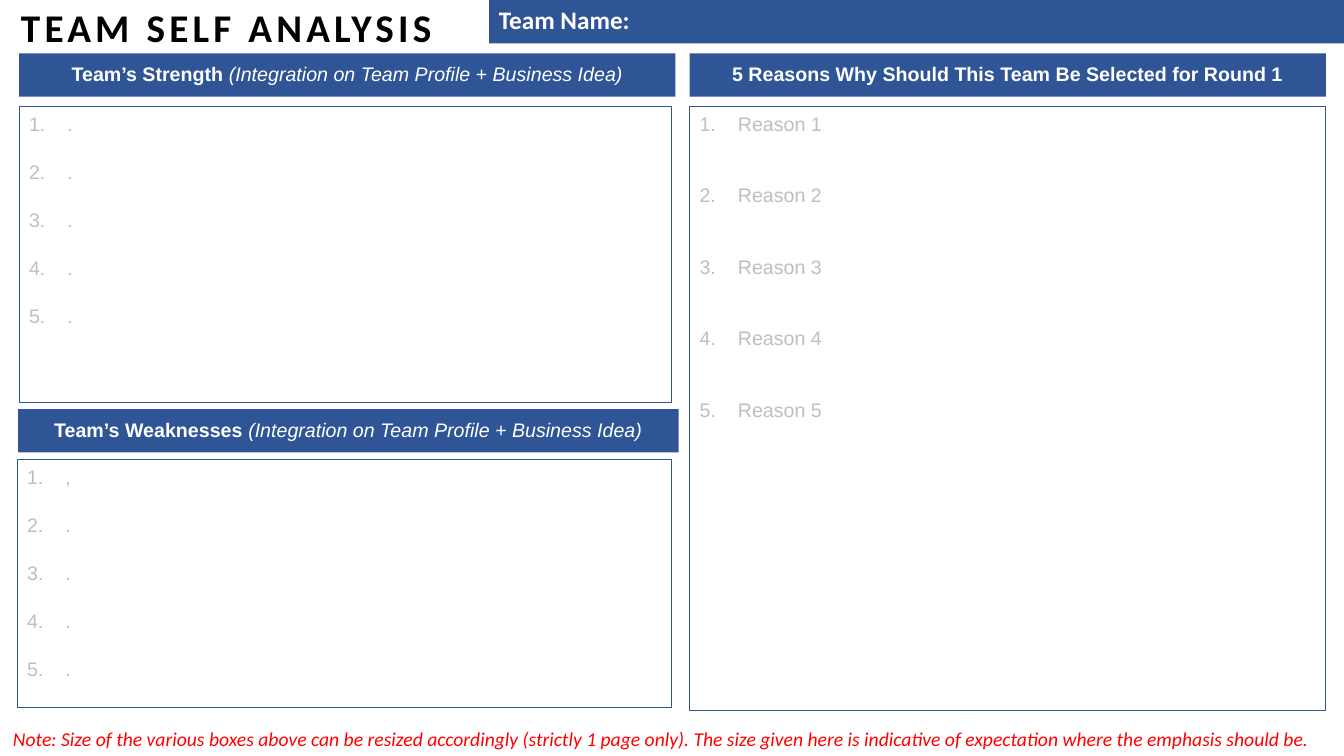
from lxml.etree import SubElement
from pptx import Presentation
from pptx.dml.color import RGBColor
from pptx.enum.shapes import MSO_SHAPE
from pptx.enum.text import MSO_ANCHOR, PP_ALIGN
from pptx.oxml.ns import qn
from pptx.util import Inches, Pt

COLORS = {"blue": "2F5597", "white": "FFFFFF", "black": "000000",
          "hint": "BFBFBF", "note": "FF0000"}
BAR_HEIGHT = 0.43
INDENT = 0.38
FOCUS = "(Integration on Team Profile + Business Idea)"


def style_run(run, font, size, color, bold=False, italic=False):
    """Format one run of text."""
    run.font.name = font
    run.font.size = Pt(size)
    run.font.bold = bold
    run.font.italic = italic
    run.font.color.rgb = RGBColor.from_string(COLORS[color])


def add_panel(slide, box, fill=None, outline=None):
    """Add a flat rectangle with an optional fill and outline."""
    panel = slide.shapes.add_shape(MSO_SHAPE.RECTANGLE, *map(Inches, box))
    panel.shadow.inherit = False
    if fill:
        panel.fill.solid()
        panel.fill.fore_color.rgb = RGBColor.from_string(COLORS[fill])
    else:
        panel.fill.background()
    if outline:
        panel.line.color.rgb = RGBColor.from_string(COLORS[outline])
        panel.line.width = Pt(0.75)
    else:
        panel.line.fill.background()
    panel.text_frame.word_wrap = True
    return panel


def add_title(slide, box, title):
    """Add the letter-spaced slide title."""
    frame = slide.shapes.add_textbox(*map(Inches, box)).text_frame
    frame.word_wrap = True
    frame.vertical_anchor = MSO_ANCHOR.MIDDLE
    frame.text = title
    heading = frame.paragraphs[0]
    heading.line_spacing = 0.9
    style_run(heading.runs[0], "Calibri", 28, "black", bold=True)
    heading.runs[0].font._element.set("spc", "300")


def add_bar(slide, box, label, focus="", font="Arial", size=14,
            align=PP_ALIGN.CENTER):
    """Add a blue heading bar with a bold label and an italic focus."""
    frame = add_panel(slide, box, fill="blue").text_frame
    frame.vertical_anchor = MSO_ANCHOR.MIDDLE
    heading = frame.paragraphs[0]
    heading.alignment = align
    heading.line_spacing = 0.9
    heading.text = label
    style_run(heading.runs[0], font, size, "white", bold=True)
    if focus:
        focus_run = heading.add_run()
        focus_run.text = focus
        style_run(focus_run, font, size, "white", italic=True)


def add_answer_box(slide, box, hints, gap):
    """Add an outlined box with numbered hints, gap points apart."""
    frame = add_panel(slide, box, outline="blue").text_frame
    frame.vertical_anchor = MSO_ANCHOR.TOP
    frame.text = "\n".join(hints)
    for hint in frame.paragraphs:
        hint.alignment = PP_ALIGN.LEFT
        hint.space_after = Pt(gap)
        style_run(hint.runs[0], "Arial", 14, "hint")
        properties = hint._p.get_or_add_pPr()
        properties.set("marL", str(Inches(INDENT)))
        properties.set("indent", str(-Inches(INDENT)))
        SubElement(properties, qn("a:buFont"), typeface="+mj-lt")
        SubElement(properties, qn("a:buAutoNum"), type="arabicPeriod")


def add_note(slide, box, note):
    """Add the red footnote."""
    frame = slide.shapes.add_textbox(*map(Inches, box)).text_frame
    frame.word_wrap = True
    frame.text = note
    style_run(frame.paragraphs[0].runs[0], "Calibri", 14, "note", italic=True)


def main():
    """Build the team self analysis slide."""
    deck = Presentation()
    deck.slide_width, deck.slide_height = Inches(13.33), Inches(7.5)
    slide = deck.slides.add_slide(deck.slide_layouts[6])

    add_title(slide, (0.11, 0.08, 4.75, BAR_HEIGHT), "TEAM SELF ANALYSIS")
    add_bar(slide, (4.85, 0, 8.48, BAR_HEIGHT), "Team Name:",
            font="Calibri", size=18, align=PP_ALIGN.LEFT)
    add_bar(slide, (0.19, 0.53, 6.51, BAR_HEIGHT), "Team’s Strength ", FOCUS)
    add_bar(slide, (6.84, 0.53, 6.31, BAR_HEIGHT),
            "5 Reasons Why Should This Team Be Selected for Round 1")
    add_bar(slide, (0.18, 4.06, 6.55, BAR_HEIGHT), "Team’s Weaknesses ", FOCUS)

    add_answer_box(slide, (0.19, 1.06, 6.47, 2.93), ["."] * 5, 17.5)
    add_answer_box(slide, (0.17, 4.56, 6.49, 2.46), [","] + ["."] * 4, 17.5)
    add_answer_box(slide, (6.84, 1.06, 6.31, 5.99),
                   [f"Reason {number}" for number in range(1, 6)], 34.25)

    add_note(slide, (0.03, 7.16, 13.12, 0.34),
             "Note: Size of the various boxes above can be resized accordingly "
             "(strictly 1 page only). The size given here is indicative of "
             "expectation where the emphasis should be.")
    deck.save("out.pptx")


if __name__ == "__main__":
    main()
